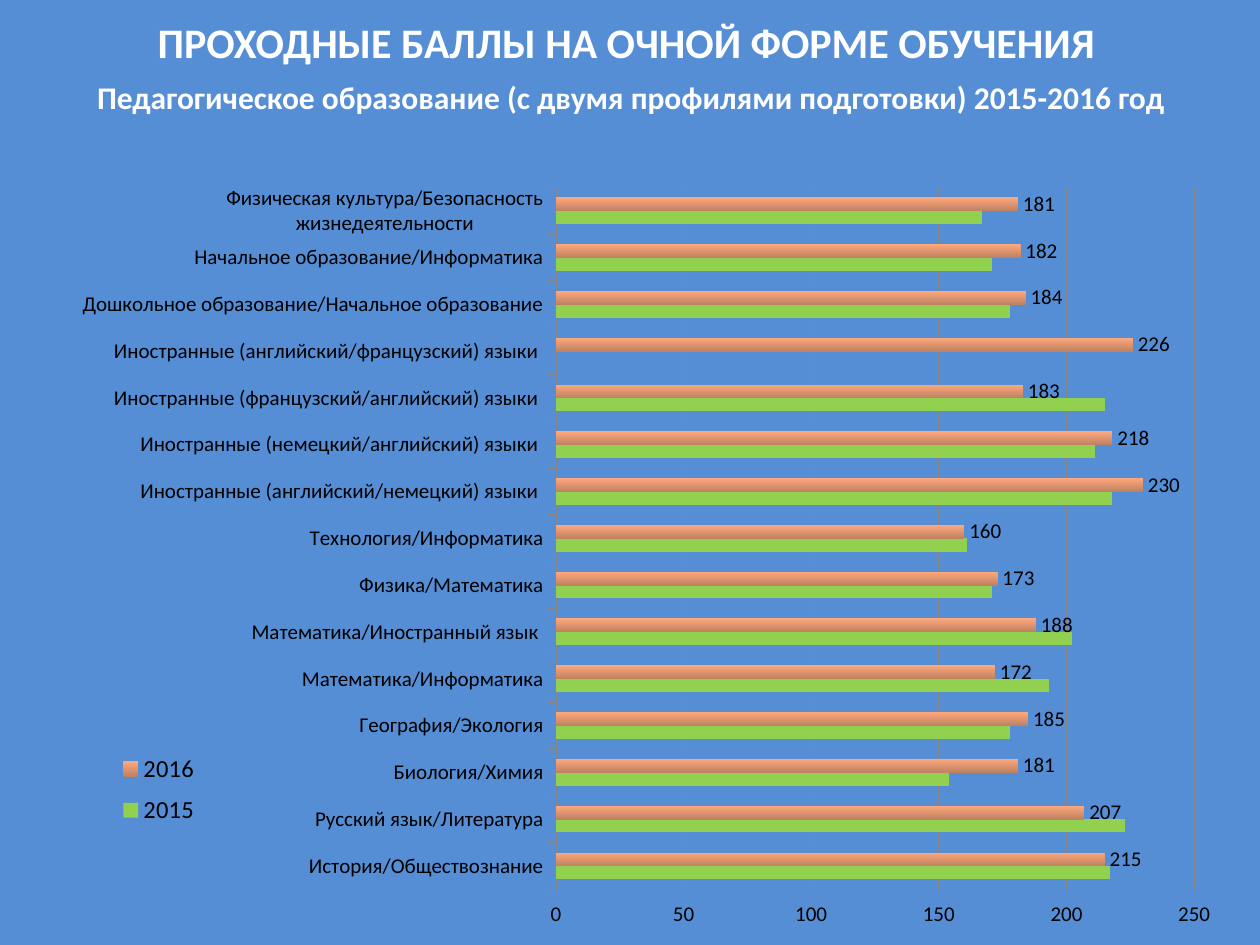
from copy import deepcopy
from pptx import Presentation
from pptx import util as u
from pptx.chart import data as cd
from pptx.dml.color import RGBColor
from pptx.enum import chart as ch, text as tx
from pptx.oxml import parse_xml
from pptx.oxml.ns import nsdecls

SCORES = [
    ("История/Обществознание", 217, 215),
    ("Русский язык/Литература", 223, 207),
    ("Биология/Химия", 154, 181),
    ("География/Экология", 178, 185),
    ("Математика/Информатика", 193, 172),
    ("Математика/Иностранный язык ", 202, 188),
    ("Физика/Математика", 171, 173),
    ("Технология/Информатика", 161, 160),
    ("Иностранные (английский/немецкий) языки ", 218, 230),
    ("Иностранные (немецкий/английский) языки ", 211, 218),
    ("Иностранные (французский/английский) языки ", 215, 183),
    ("Иностранные (английский/французский) языки ", None, 226),
    ("Дошкольное образование/Начальное образование", 178, 184),
    ("Начальное образование/Информатика", 171, 182),
    ("Физическая культура/Безопасность жизнедеятельности", 167, 181),
]


def tint(color, code):
    color.rgb = RGBColor.from_string(code)


def paint(fill, code):
    fill.solid()
    tint(fill.fore_color, code)


def apply(item, vals):
    for key, val in vals.items():
        setattr(item, key, val)


def style(font, size, code, bold=False):
    apply(font, {"name": "Calibri", "size": u.Pt(size), "bold": bold})
    tint(font.color, code)


def add_run(para, words, size):
    run = para.add_run()
    run.text = words
    style(run.font, size, "FFFFFF", True)
    return run


def add_title(slide):
    title = slide.shapes.title
    apply(title, {"left": u.Pt(34), "top": u.Pt(10),
                  "width": u.Pt(648), "height": u.Pt(57)})
    frame = title.text_frame
    apply(frame, {"word_wrap": True, "auto_size": tx.MSO_AUTO_SIZE.NONE,
                  "vertical_anchor": tx.MSO_ANCHOR.MIDDLE})
    para = frame.paragraphs[0]
    para.alignment = tx.PP_ALIGN.CENTER
    head = add_run(para, "ПРОХОДНЫЕ БАЛЛЫ НА ОЧНОЙ ФОРМЕ ОБУЧЕНИЯ", 24)
    para.add_line_break()
    para._p[-1].append(deepcopy(head._r.rPr))
    add_run(para, " ", 24)
    add_run(para, "Педагогическое образование (с двумя профилями подготовки) "
                  "2015-2016 год", 18)


def layout(x, y, w, h, inner=False):
    target = '<c:layoutTarget val="inner"/>' if inner else ""
    modes = "".join(f'<c:{k}Mode val="edge"/>' for k in "xy")
    sizes = "".join(f'<c:{k} val="{v}"/>' for k, v in zip("xywh", (x, y, w, h)))
    return parse_xml(f'<c:layout {nsdecls("c")}><c:manualLayout>{target}{modes}'
                     f'{sizes}</c:manualLayout></c:layout>')


def set_plot(chart):
    area = chart._chartSpace.chart.plotArea
    for old in area.findall("{*}layout"):
        area.remove(old)
    area.insert(0, layout(0.416, 0.054, 0.54, 0.893, True))


def set_legend(chart):
    chart.has_legend = True
    legend = chart.legend
    apply(legend, {"position": ch.XL_LEGEND_POSITION.RIGHT,
                   "include_in_layout": False})
    style(legend.font, 14, "000000")
    root = legend._element
    for old in root.findall("{*}layout"):
        root.remove(old)
    root.find("{*}legendPos").addnext(layout(0.03, 0.76, 0.1, 0.12))


def set_axes(chart):
    cat, val = chart.category_axis, chart.value_axis
    for axis in (cat, val):
        axis.major_tick_mark = ch.XL_TICK_MARK.OUTSIDE
        style(axis.tick_labels.font, 12, "000000")
    cat.has_major_gridlines = False
    apply(val, {"minimum_scale": 0, "maximum_scale": 250, "major_unit": 50,
                "has_major_gridlines": True})
    val.format.line.fill.background()
    for line in (cat.format.line, val.major_gridlines.format.line):
        paint(line.fill, "868686")
        line.width = u.Pt(0.75)


def set_bars(chart):
    plot = chart.plots[0]
    apply(plot, {"gap_width": 75 * 2, "overlap": 0, "vary_by_categories": False})
    old, new = plot.series
    paint(old.format.fill, "92D050")
    fill = new.format.fill
    fill.gradient()
    fill.gradient_angle = 270
    for stop, code in zip(fill.gradient_stops, ("FFA87C", "C08362")):
        tint(stop.color, code)
    tags = new.data_labels
    apply(tags, {"show_value": True,
                 "position": ch.XL_LABEL_POSITION.OUTSIDE_END})
    style(tags.font, 12, "000000")


def add_bars(slide):
    cats, old, new = zip(*SCORES)
    data = cd.CategoryChartData()
    data.categories = cats
    data.add_series("2015", old)
    data.add_series("2016", new)
    chart = slide.shapes.add_chart(
        ch.XL_CHART_TYPE.BAR_CLUSTERED, u.Pt(36.7), u.Pt(82.8),
        u.Pt(675.4), u.Pt(449.3), data).chart
    chart.has_title = False
    style(chart.font, 12, "000000")
    for step in (set_plot, set_legend, set_axes, set_bars):
        step(chart)


def main():
    deck = Presentation()
    apply(deck, {"slide_width": u.Pt(720), "slide_height": u.Pt(540)})
    slide = deck.slides.add_slide(deck.slide_layouts[5])
    paint(slide.background.fill, "558ED5")
    add_title(slide)
    add_bars(slide)
    deck.save("out.pptx")


if __name__ == "__main__":
    main()
